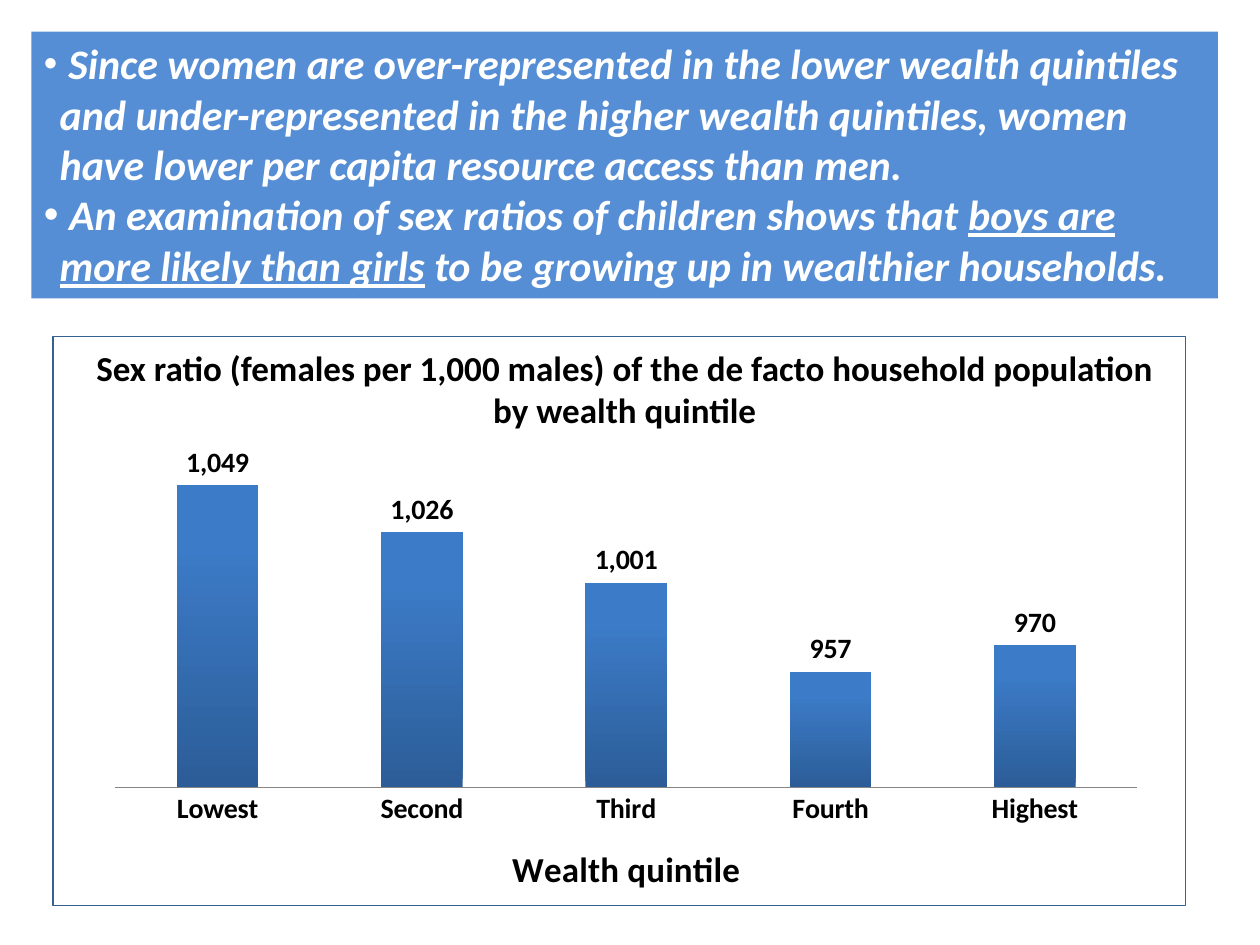
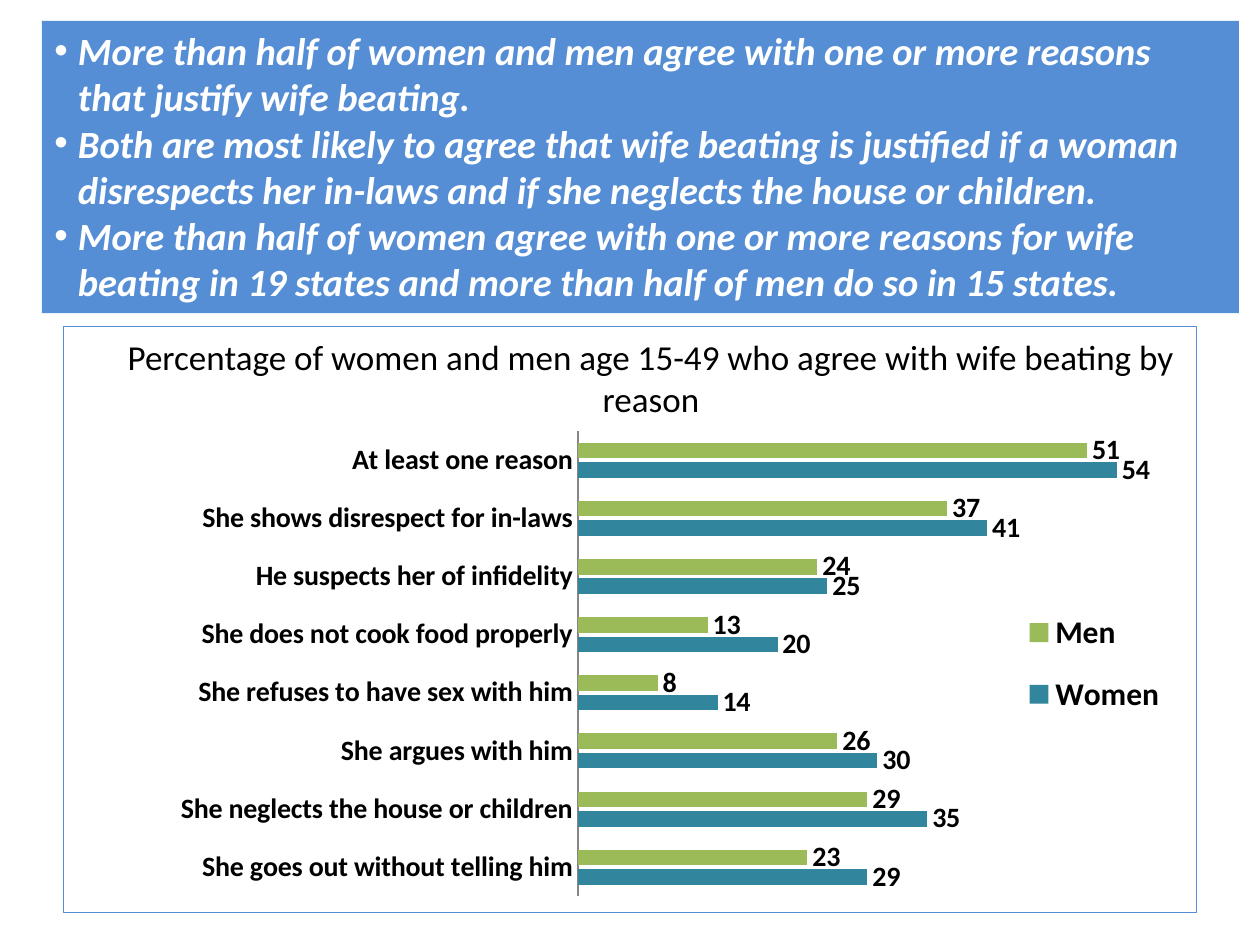
"""Two survey slides, each with a blue text band over a bordered bar chart."""
from dataclasses import dataclass
from typing import Any, NamedTuple, Optional

from lxml import etree
from pptx import Presentation
from pptx.chart.data import CategoryChartData
from pptx.dml.color import RGBColor
from pptx.enum.chart import (XL_CHART_TYPE, XL_LABEL_POSITION,
                             XL_LEGEND_POSITION, XL_TICK_MARK)
from pptx.enum.shapes import MSO_SHAPE
from pptx.enum.text import MSO_ANCHOR, MSO_AUTO_SIZE, PP_ALIGN
from pptx.oxml.ns import qn
from pptx.util import Pt

COLUMN = XL_CHART_TYPE.COLUMN_CLUSTERED
BAR = XL_CHART_TYPE.BAR_CLUSTERED
OUTER = XL_LABEL_POSITION.OUTSIDE_END
TOP_KEY = XL_LEGEND_POSITION.TOP
NO_TICK = XL_TICK_MARK.NONE
RECT = MSO_SHAPE.RECTANGLE
MIDDLE, TOP = MSO_ANCHOR.MIDDLE, MSO_ANCHOR.TOP
GROW = MSO_AUTO_SIZE.SHAPE_TO_FIT_TEXT
LEFT, CENTER = PP_ALIGN.LEFT, PP_ALIGN.CENTER


@dataclass(frozen=True)
class Theme:
    """Colours, font and type sizes of the deck."""
    face: str = "Calibri"
    ink: str = "000000"
    white: str = "FFFFFF"
    band: str = "558ED5"
    navy: str = "376092"
    axis: str = "868686"
    teal: str = "31859C"
    green: str = "9BBB59"
    deep: str = "2C5D98"
    bright: str = "3C7BC7"
    large: float = 24
    body: float = 22
    head: float = 20
    key: float = 18
    label: float = 16
    base: float = 10


THEME = Theme()


class Box(NamedTuple):
    """Left, top, width and height, in points or as shares of a chart."""
    left: float
    top: float
    width: float
    height: float

    def pts(self) -> list[Pt]:
        """Give the four lengths in points."""
        return [Pt(side) for side in self]


class Part(NamedTuple):
    """A run of band text."""
    text: str
    size: float = THEME.body
    under: bool = False


class Series(NamedTuple):
    """A chart series with one solid tint or two gradient tints."""
    name: str
    vals: tuple[int, ...]
    tints: tuple[str, ...]


@dataclass(frozen=True)
class Graph:
    """A bar chart with its frame, plot area and scale."""
    box: Box
    kind: Any
    cats: tuple[str, ...]
    series: tuple[Series, ...]
    plot: Box
    low: float
    high: float
    edge: str
    name: Optional[str] = None
    key: Optional[Box] = None


@dataclass(frozen=True)
class Page:
    """All that one slide holds."""
    graph: Graph
    title: str
    title_box: Box
    bold: bool
    band_box: Box
    indent: float
    points: tuple[tuple[Part, ...], ...]


def put(item: Any, **vals: Any) -> None:
    """Set attributes from format values."""
    for name, val in vals.items():
        setattr(item, name, val)


def style(font: Any, size: float, color: str = THEME.ink, **vals: Any) -> None:
    """Format a font in the deck face."""
    put(font, name=THEME.face, size=Pt(size), **vals)
    font.color.rgb = RGBColor.from_string(color)


def solid(fill: Any, color: str) -> None:
    """Give a fill one colour."""
    fill.solid()
    fill.fore_color.rgb = RGBColor.from_string(color)


def sub(node: Any, tag: str, **vals: Any) -> Any:
    """Add a child element with attributes."""
    return etree.SubElement(node, qn(tag), {k: str(v) for k, v in vals.items()})


def layout(box: Box, inner: bool = False) -> Any:
    """Make a manual chart layout."""
    root = etree.Element(qn("c:layout"))
    man = sub(root, "c:manualLayout")
    if inner:
        sub(man, "c:layoutTarget", val="inner")
    for mode in ("c:xMode", "c:yMode"):
        sub(man, mode, val="edge")
    for tag, val in zip(("c:x", "c:y", "c:w", "c:h"), box):
        sub(man, tag, val=val)
    return root


def clear(node: Any) -> None:
    """Drop the automatic layout of a chart part."""
    for old in node.findall(qn("c:layout")):
        node.remove(old)


def frame(chart: Any, color: str) -> None:
    """Draw a thin border around a chart."""
    props = etree.Element(qn("c:spPr"))
    sub(props, "a:noFill")
    line = sub(props, "a:ln", w=int(Pt(0.75)))
    sub(sub(line, "a:solidFill"), "a:srgbClr", val=color)
    chart._chartSpace.find(qn("c:txPr")).addprevious(props)


def paint(fill: Any, tints: tuple[str, ...]) -> None:
    """Fill bars with one tint or a rising gradient."""
    if len(tints) == 1:
        solid(fill, tints[0])
        return
    fill.gradient()
    fill.gradient_angle = 90
    for stop, tint, place in zip(fill.gradient_stops, tints, (0, 0.8)):
        stop.color.rgb = RGBColor.from_string(tint)
        stop.position = place


def add_graph(slide: Any, graph: Graph) -> None:
    """Place a bar chart on the slide."""
    data = CategoryChartData(number_format="#,##0")
    data.categories = graph.cats
    for row in graph.series:
        data.add_series(row.name, row.vals)
    chart = slide.shapes.add_chart(graph.kind, *graph.box.pts(), data).chart
    put(chart, has_title=False, has_legend=bool(graph.key))
    style(chart.font, THEME.base)
    frame(chart, graph.edge)

    plot = chart.plots[0]
    put(plot, gap_width=150, overlap=-25, vary_by_categories=False,
        has_data_labels=True)
    labels = plot.data_labels
    put(labels, show_value=True, number_format="#,##0",
        number_format_is_linked=False, position=OUTER)
    style(labels.font, THEME.label, bold=True)
    for bars, row in zip(plot.series, graph.series):
        bars.invert_if_negative = False
        paint(bars.format.fill, row.tints)

    cat = chart.category_axis
    put(cat, major_tick_mark=NO_TICK, has_major_gridlines=False)
    style(cat.tick_labels.font, THEME.label, bold=True)
    cat.format.line.color.rgb = RGBColor.from_string(THEME.axis)
    put(chart.value_axis, visible=False, has_major_gridlines=False,
        minimum_scale=graph.low, maximum_scale=graph.high)
    if graph.name:
        text = cat.axis_title.text_frame
        text.text = graph.name
        style(text.paragraphs[0].runs[0].font, THEME.head, bold=True)

    area = chart._chartSpace.chart.plotArea
    clear(area)
    area.insert(0, layout(graph.plot, inner=True))
    if graph.key:
        key = chart.legend
        put(key, position=TOP_KEY, include_in_layout=False)
        style(key.font, THEME.key, bold=True)
        clear(key._element)
        key._element.find(qn("c:legendPos")).addnext(layout(graph.key))


def add_title(slide: Any, page: Page) -> None:
    """Place the chart heading."""
    text = slide.shapes.add_textbox(*page.title_box.pts()).text_frame
    put(text, word_wrap=True, vertical_anchor=MIDDLE)
    para = text.paragraphs[0]
    para.alignment = CENTER
    run = para.add_run()
    run.text = page.title
    style(run.font, THEME.head, bold=page.bold)


def add_band(slide: Any, page: Page) -> None:
    """Place the blue band with its bullet points."""
    shape = slide.shapes.add_shape(RECT, *page.band_box.pts())
    shape.shadow.inherit = False
    solid(shape.fill, THEME.band)
    shape.line.fill.background()
    text = shape.text_frame
    put(text, word_wrap=True, vertical_anchor=TOP, auto_size=GROW)
    for num, point in enumerate(page.points):
        para = text.add_paragraph() if num else text.paragraphs[0]
        para.alignment = LEFT
        props = para._p.get_or_add_pPr()
        put_in = int(Pt(page.indent))
        props.set("marL", str(put_in))
        props.set("indent", str(-put_in))
        sub(props, "a:buFont", typeface="Arial")
        sub(props, "a:buChar", char="•")
        for part in point:
            run = para.add_run()
            run.text = part.text
            style(run.font, part.size, THEME.white, bold=True, italic=True,
                  underline=part.under)


RATIO = Page(
    graph=Graph(
        Box(30, 192, 648, 326), COLUMN,
        ("Lowest", "Second", "Third", "Fourth", "Highest"),
        (Series("Series 1", (1049, 1026, 1001, 957, 970),
                (THEME.deep, THEME.bright)),),
        Box(0.055, 0.222, 0.902, 0.57), 900, 1060, THEME.navy,
        name="Wealth quintile"),
    title="Sex ratio (females per 1,000 males) of the de facto household "
          "population by wealth quintile",
    title_box=Box(42, 192, 630, 60), bold=True,
    band_box=Box(18, 18, 678, 152.6), indent=9,
    points=(
        (Part(" "),
         Part("Since women are over-represented in the lower wealth quintiles "
              "and under-represented in the higher wealth quintiles, women "
              "have lower per capita resource access than men.", THEME.large)),
        (Part(" An examination of sex ratios of children shows that ",
              THEME.large),
         Part("boys are more likely than girls", THEME.large, True),
         Part(" to be growing up in wealthier households.", THEME.large))))

REASON = Page(
    graph=Graph(
        Box(36, 186, 648, 336), BAR,
        ("She goes out without telling him", "She neglects the house or children",
         "She argues with him", "She refuses to have sex with him",
         "She does not cook food properly", "He suspects her of infidelity",
         "She shows disrespect for in-laws", "At least one reason"),
        (Series("Women", (29, 35, 30, 14, 20, 25, 41, 54), (THEME.teal,)),
         Series("Men", (23, 29, 26, 8, 13, 24, 37, 51), (THEME.green,))),
        Box(0.454, 0.179, 0.529, 0.793), 0, 60, THEME.band,
        key=Box(0.84, 0.45, 0.14, 0.25)),
    title="Percentage of women and men age 15-49 who agree with wife beating "
          "by reason",
    title_box=Box(48, 180, 648, 72), bold=False,
    band_box=Box(24, 12, 684, 167), indent=13.5,
    points=(
        (Part("More than half of women and men agree with one or more reasons "
              "that justify wife beating."),),
        (Part("Both are most likely to agree that wife beating is justified if "
              "a woman disrespects her in-laws and if she neglects the house "
              "or children."),),
        (Part("More than half of women agree with one or more reasons for wife "
              "beating in 19 states and more than half of men do so in 15 "
              "states."),)))


def main() -> None:
    """Build and save the deck."""
    deck = Presentation()
    put(deck, slide_width=Pt(720), slide_height=Pt(540))
    for page in (RATIO, REASON):
        slide = deck.slides.add_slide(deck.slide_layouts[6])
        add_graph(slide, page.graph)
        add_title(slide, page)
        add_band(slide, page)
    deck.save("out.pptx")


if __name__ == "__main__":
    main()
